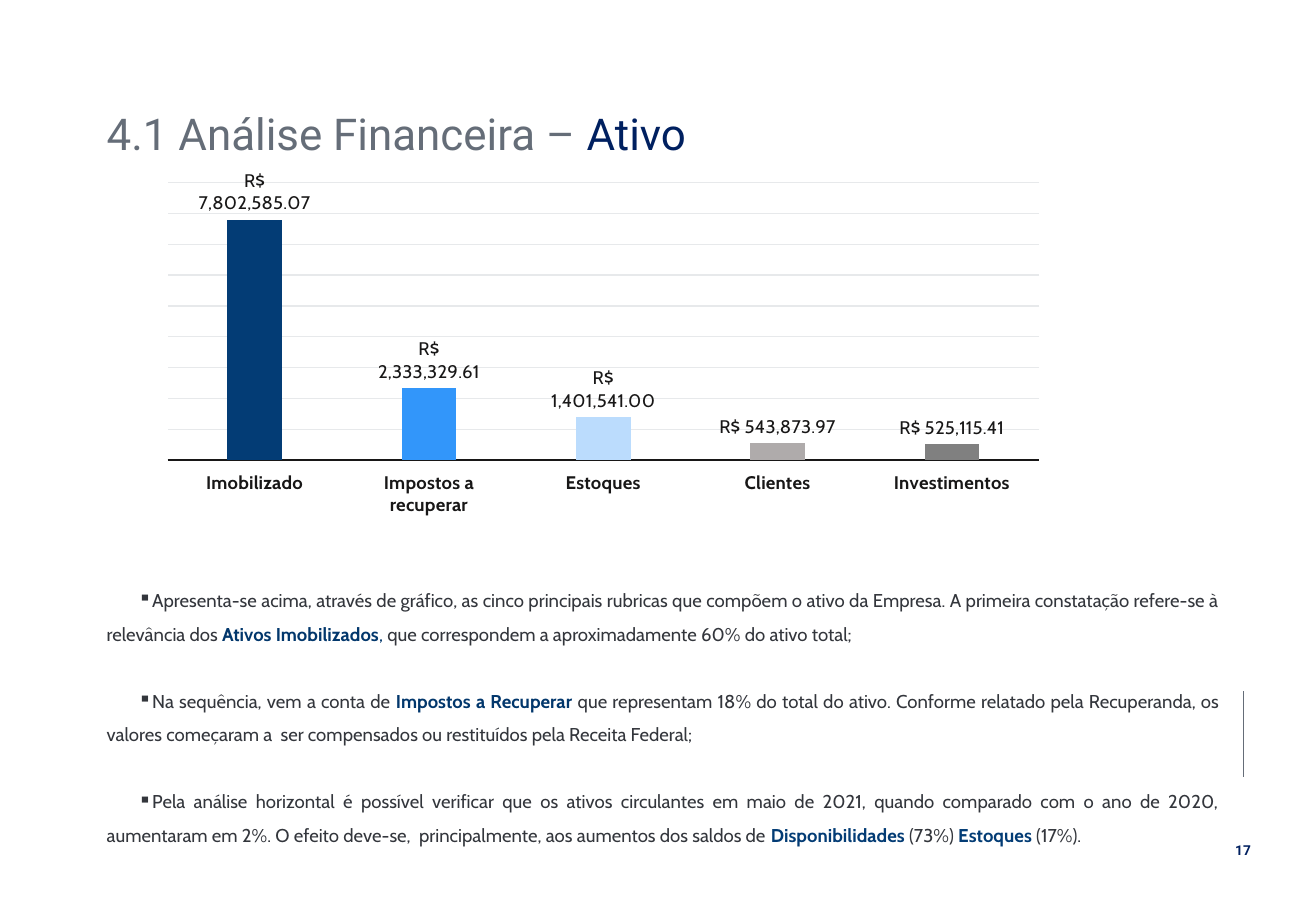
from lxml.etree import SubElement
from pptx import Presentation
from pptx.chart.data import CategoryChartData
from pptx.dml.color import RGBColor
from pptx.enum.chart import XL_CHART_TYPE as ChartType
from pptx.enum.chart import XL_LABEL_POSITION as LabelPosition
from pptx.enum.chart import XL_TICK_LABEL_POSITION as TickLabels
from pptx.enum.chart import XL_TICK_MARK as TickMark
from pptx.enum.shapes import MSO_CONNECTOR as Connector
from pptx.enum.text import MSO_ANCHOR as Anchor
from pptx.enum.text import PP_ALIGN as Align
from pptx.oxml.ns import qn
from pptx.util import Emu, Pt

SCALE = 9144  # EMU in one px, 100 px to the inch
SLATE = RGBColor(0x65, 0x6D, 0x78)
NAVY = RGBColor(0x00, 0x20, 0x60)
INK = RGBColor(0x33, 0x36, 0x3C)
DEEP_BLUE = RGBColor(0x02, 0x37, 0x6C)
BLACK = RGBColor(0x18, 0x17, 0x17)
GRID = RGBColor(0xE7, 0xE9, 0xEB)
IMOBILIZADO = RGBColor(0x03, 0x3C, 0x75)
IMPOSTOS = RGBColor(0x32, 0x96, 0xFA)
ESTOQUES = RGBColor(0xBB, 0xDC, 0xFD)
CLIENTES = RGBColor(0xAF, 0xAB, 0xAB)
INVESTIMENTOS = RGBColor(0x80, 0x80, 0x80)

MONEY = '"R$"\\ #,##0.00'
ASSETS = [
    ("Imobilizado", 7802585.07, IMOBILIZADO),
    ("Impostos a recuperar", 2333329.61, IMPOSTOS),
    ("Estoques", 1401541.00, ESTOQUES),
    ("Clientes", 543873.97, CLIENTES),
    ("Investimentos", 525115.41, INVESTIMENTOS),
]

TITLE = {"name": "Roboto", "size": Pt(26)}
NUMBER = {"name": "Roboto", "size": Pt(8.1), "bold": True}
BODY = {"name": "Cabin", "size": Pt(11), "bold": False}
STRONG = {**BODY, "bold": True}

# Each comment is a list of (text, format, colour)
COMMENTS = [
    [
        ("Apresenta-se acima, através de gráfico, as cinco principais rubricas que "
         "compõem o ativo da Empresa. A primeira constatação refere-se à relevância dos ",
         BODY, INK),
        ("Ativos Imobilizados", STRONG, DEEP_BLUE),
        (",", BODY, DEEP_BLUE),
        (" que correspondem a aproximadamente 60% do ativo total;", BODY, INK),
    ],
    [
        ("Na sequência, vem a conta de ", BODY, INK),
        ("Impostos a Recuperar", STRONG, DEEP_BLUE),
        (" que representam 18% do total do ativo. Conforme relatado pela Recuperanda, "
         "os valores começaram a  ser compensados ou restituídos pela Receita Federal;",
         BODY, INK),
    ],
    [
        ("Pela análise horizontal é possível verificar que os ativos circulantes em maio "
         "de 2021, quando comparado com o ano de 2020, aumentaram em 2%. O efeito "
         "deve-se,  principalmente, aos aumentos dos saldos de ", BODY, INK),
        ("Disponibilidades ", STRONG, IMOBILIZADO),
        ("(73%) ", BODY, INK),
        ("Estoques", STRONG, IMOBILIZADO),
        (" (17%).", BODY, INK),
    ],
]


def px(*lengths):
    return [Emu(length * SCALE) for length in lengths]


def apply(target, values):
    for name, value in values.items():
        setattr(target, name, value)


def set_font(font, values, colour):
    apply(font, values)
    font.color.rgb = colour


def set_line(line, colour, width):
    line.color.rgb = colour
    line.width = Pt(width)


def add_bullet(para, indent):
    """Start the first line with a square, set in by indent px."""
    properties = para._p.get_or_add_pPr()
    properties.set("marL", "0")
    properties.set("indent", str(indent * SCALE))
    SubElement(properties, qn("a:buChar")).set("char", "▪")


def add_text(page, place, paragraphs, layout, frame_values, bullet_indent=None, gap=0):
    box = page.shapes.add_textbox(*px(*place))
    frame = box.text_frame
    apply(frame, frame_values)
    for index, spans in enumerate(paragraphs):
        para = frame.add_paragraph() if index else frame.paragraphs[0]
        if bullet_indent is not None:
            add_bullet(para, bullet_indent)
        apply(para, layout)
        if index and gap:
            para.space_before = Pt(gap)
        for text, values, colour in spans:
            span = para.add_run()
            span.text = text
            set_font(span.font, values, colour)


def add_rule(page, start, end):
    rule = page.shapes.add_connector(Connector.STRAIGHT, *px(*start, *end))
    set_line(rule.line, SLATE, 0.5)
    SubElement(rule._element.spPr, qn("a:effectLst"))


def add_asset_chart(page, place):
    names, values, colours = zip(*ASSETS)
    data = CategoryChartData(number_format=MONEY)
    data.categories = names
    data.add_series("Ativo", values)
    chart = page.shapes.add_chart(ChartType.COLUMN_CLUSTERED, *px(*place), data).chart
    apply(chart, {"has_legend": False, "has_title": False})
    set_font(chart.font, BODY, BLACK)

    plot = chart.plots[0]
    apply(plot, {"gap_width": 219, "overlap": -27,
                 "vary_by_categories": False, "has_data_labels": True})
    labels = plot.data_labels
    apply(labels, {"show_value": True, "number_format": MONEY,
                   "number_format_is_linked": False,
                   "position": LabelPosition.OUTSIDE_END})
    set_font(labels.font, BODY, BLACK)
    series = plot.series[0]
    series.invert_if_negative = False
    for index, colour in enumerate(colours):
        fill = series.points[index].format.fill
        fill.solid()
        fill.fore_color.rgb = colour

    names_axis = chart.category_axis
    apply(names_axis, {"major_tick_mark": TickMark.NONE, "minor_tick_mark": TickMark.NONE,
                       "tick_label_position": TickLabels.LOW})
    set_font(names_axis.tick_labels.font, STRONG, BLACK)
    set_line(names_axis.format.line, BLACK, 0.75)
    money_axis = chart.value_axis
    apply(money_axis, {"visible": False, "has_major_gridlines": True, "minimum_scale": 0,
                       "maximum_scale": 9000000, "major_unit": 1000000})
    set_line(money_axis.major_gridlines.format.line, GRID, 0.75)


def main():
    deck = Presentation()
    deck.slide_width, deck.slide_height = px(1083, 750)
    page = deck.slides.add_slide(deck.slide_layouts[6])

    add_rule(page, (1023, 569), (1023, 640))
    add_text(page, (1006, 688, 34, 24), [[("17", NUMBER, NAVY)]],
             {"alignment": Align.CENTER}, {"word_wrap": False})
    add_text(page, (78, 86, 818, 53),
             [[("4.1 Análise Financeira – ", TITLE, SLATE), ("Ativo", TITLE, NAVY)]],
             {"line_spacing": 0.9},
             {"word_wrap": True, "vertical_anchor": Anchor.MIDDLE})
    add_text(page, (78, 471, 936, 229), COMMENTS,
             {"alignment": Align.JUSTIFY, "line_spacing": 1.5},
             {"word_wrap": True}, bullet_indent=26, gap=20)
    add_asset_chart(page, (123, 140, 747, 291))
    deck.save("out.pptx")


if __name__ == "__main__":
    main()
